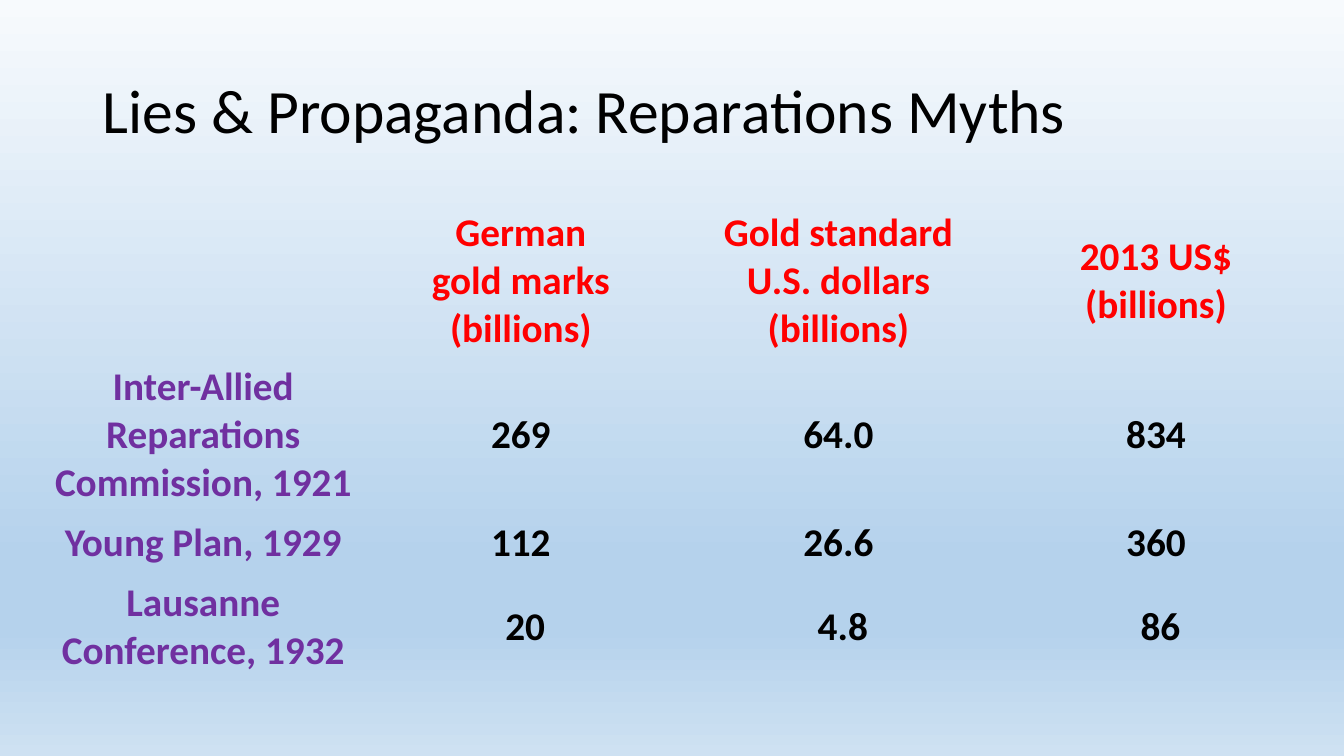
from copy import deepcopy

from pptx import Presentation
from pptx.dml.color import RGBColor
from pptx.enum.text import MSO_ANCHOR, MSO_AUTO_SIZE, PP_ALIGN
from pptx.util import Inches, Pt

MIDDLE = MSO_ANCHOR.MIDDLE
CENTER = PP_ALIGN.CENTER
LEFT = PP_ALIGN.LEFT
NO_AUTOFIT = MSO_AUTO_SIZE.NONE

BLACK = RGBColor(0x00, 0x00, 0x00)
RED = RGBColor(0xFF, 0x00, 0x00)
PURPLE = RGBColor(0x70, 0x30, 0xA0)
PALE_BLUE = RGBColor(0xF7, 0xFA, 0xFD)
SKY_BLUE = RGBColor(0xB5, 0xD2, 0xEC)
LIGHT_BLUE = RGBColor(0xCE, 0xE1, 0xF2)

FONT = "Calibri"
NO_STYLE_NO_GRID = "{2D5ABB26-0587-4C30-8999-92F81FD0307C}"

BACKGROUND_STOPS = [
    (0, PALE_BLUE),
    (0.74, SKY_BLUE),
    (0.83, SKY_BLUE),
    (1, LIGHT_BLUE),
]
# A vertical tab is a line break within a paragraph.
REPARATIONS = [
    ["", "German\vgold marks\v(billions)",
     "Gold standard\vU.S. dollars\v(billions)", "2013 US$\v(billions)"],
    ["Inter-Allied Reparations Commission, 1921", "269", "64.0", "834"],
    ["Young Plan, 1929", "112", "26.6", "360"],
    ["Lausanne Conference, 1932", " 20", " 4.8", " 86"],
]
ROW_HEIGHTS = [1.53, 1.53, 0.61, 1.07]


def format_paragraph(paragraph, size, color, alignment, bold=False):
    paragraph.alignment = alignment
    for run in paragraph.runs:
        run.font.name = FONT
        run.font.size = Pt(size)
        run.font.bold = bold
        run.font.color.rgb = color


def paint_background(slide):
    fill = slide.background.fill
    fill.gradient()
    fill.gradient_angle = 270
    stop_list = slide.element.xpath(".//p:bg//a:gsLst")[0]
    while len(stop_list) < len(BACKGROUND_STOPS):
        stop_list.append(deepcopy(stop_list[0]))
    for stop, (position, color) in zip(fill.gradient_stops, BACKGROUND_STOPS):
        stop.position = position
        stop.color.rgb = color


def add_title(slide, left, top, width, height):
    title = slide.shapes.title
    title.left, title.top = Inches(left), Inches(top)
    title.width, title.height = Inches(width), Inches(height)
    text_frame = title.text_frame
    text_frame.text = "Lies & Propaganda: Reparations Myths"
    text_frame.auto_size = NO_AUTOFIT
    text_frame.vertical_anchor = MIDDLE
    paragraph = text_frame.paragraphs[0]
    paragraph.line_spacing = 0.9
    format_paragraph(paragraph, 44, BLACK, LEFT)


def add_reparations_table(slide, left, top, width):
    frame = slide.shapes.add_table(
        len(REPARATIONS), len(REPARATIONS[0]), Inches(left), Inches(top),
        Inches(width), Inches(sum(ROW_HEIGHTS)))
    frame.element.xpath(".//a:tableStyleId")[0].text = NO_STYLE_NO_GRID
    table = frame.table
    table.first_row = False
    table.horz_banding = False
    for row_index, values in enumerate(REPARATIONS):
        table.rows[row_index].height = Inches(ROW_HEIGHTS[row_index])
        for column_index, value in enumerate(values):
            cell = table.cell(row_index, column_index)
            cell.fill.background()
            cell.vertical_anchor = MIDDLE
            if row_index == 0:
                color = RED
            elif column_index == 0:
                color = PURPLE
            else:
                color = BLACK
            paragraph = cell.text_frame.paragraphs[0]
            paragraph.text = value
            format_paragraph(paragraph, 28, color, CENTER, bold=True)


def main():
    presentation = Presentation()
    presentation.slide_width = Inches(13.33)
    presentation.slide_height = Inches(7.5)
    title_only = presentation.slide_layouts[5]
    slide = presentation.slides.add_slide(title_only)
    paint_background(slide)
    add_reparations_table(slide, 0.44, 2.02, 12.6)
    add_title(slide, 0.92, 0.4, 11.5, 1.45)
    presentation.save("out.pptx")


if __name__ == "__main__":
    main()
